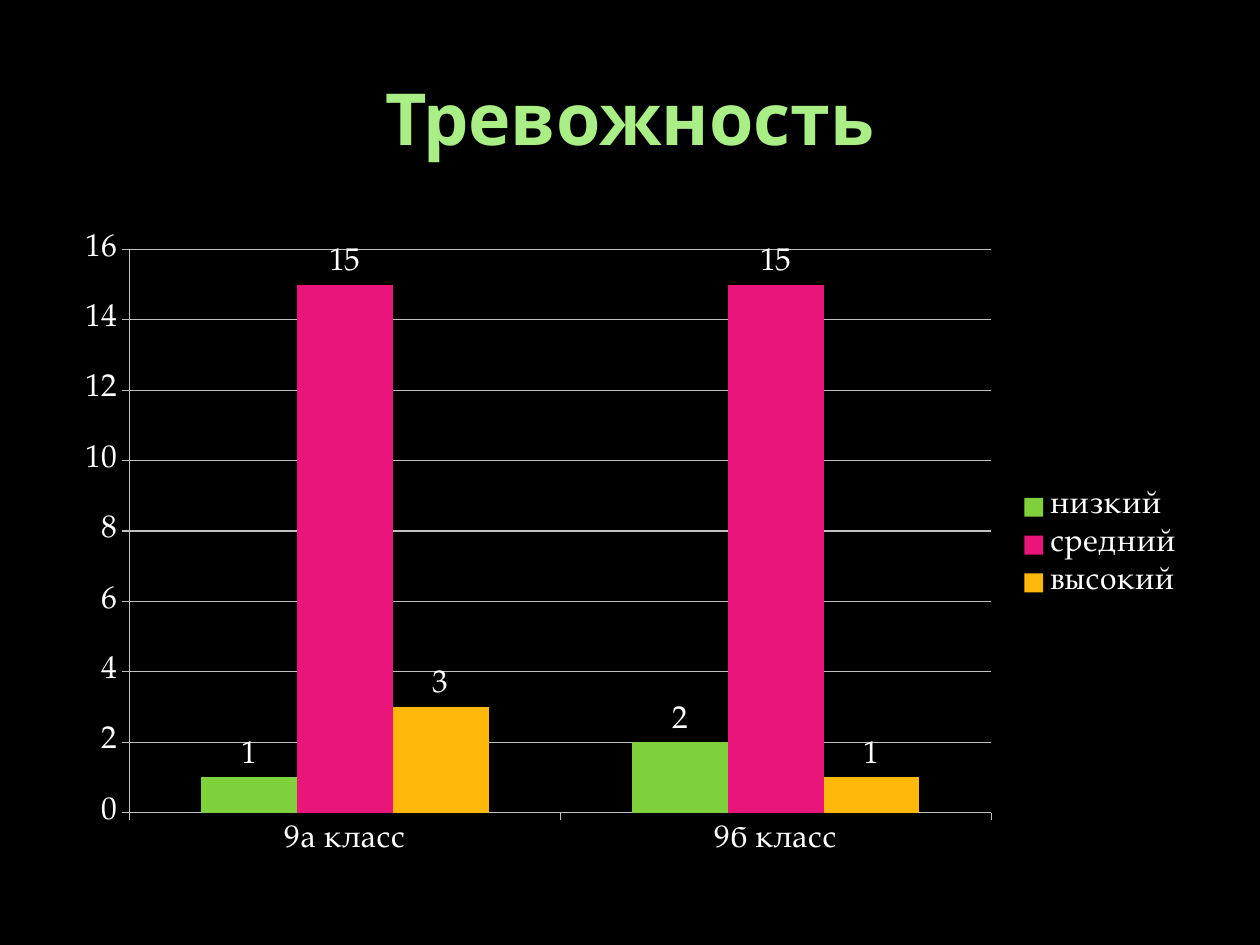
from pptx import Presentation
from pptx.chart.data import CategoryChartData
from pptx.dml.color import RGBColor
from pptx.enum.chart import XL_CHART_TYPE, XL_LABEL_POSITION, XL_LEGEND_POSITION, XL_TICK_MARK
from pptx.enum.text import MSO_ANCHOR, PP_ALIGN
from pptx.util import Cm, Pt

CATEGORIES = ["9а класс", "9б класс"]
LEVELS = [
    ("низкий", [1, 2], "7FD13B"),
    ("средний", [15, 15], "EA157A"),
    ("высокий", [3, 1], "FEB80A"),
]


def color(value):
    return RGBColor.from_string(value)


def format_font(font, name, size, fill, bold=False):
    font.name = name
    font.size = Pt(size)
    font.bold = bold
    font.color.rgb = color(fill)


def add_text(slide, box, text, align=PP_ALIGN.LEFT, **font_format):
    shape = slide.shapes.add_textbox(*map(Cm, box))
    frame = shape.text_frame
    frame.word_wrap = True
    frame.vertical_anchor = MSO_ANCHOR.MIDDLE
    paragraph = frame.paragraphs[0]
    paragraph.alignment = align
    run = paragraph.add_run()
    run.text = text
    format_font(run.font, **font_format)
    return shape


def format_line(line):
    line.color.rgb = color("C0C0C0")
    line.width = Pt(0.75)


def add_level_chart(slide, box):
    data = CategoryChartData()
    data.categories = CATEGORIES
    for name, values, _ in LEVELS:
        data.add_series(name, values)
    chart = slide.shapes.add_chart(
        XL_CHART_TYPE.COLUMN_CLUSTERED, *map(Cm, box), data
    ).chart
    format_font(chart.font, "TeX Gyre Pagella", 18, "FFFFFF")
    chart.has_title = False
    chart.has_legend = True
    chart.legend.position = XL_LEGEND_POSITION.RIGHT
    chart.legend.include_in_layout = False

    for axis in (chart.category_axis, chart.value_axis):
        axis.major_tick_mark = XL_TICK_MARK.OUTSIDE
        format_line(axis.format.line)
    value_axis = chart.value_axis
    value_axis.minimum_scale = 0
    value_axis.maximum_scale = 16
    value_axis.major_unit = 2
    value_axis.has_major_gridlines = True
    format_line(value_axis.major_gridlines.format.line)

    plot = chart.plots[0]
    plot.gap_width = 150
    plot.overlap = 0
    plot.vary_by_categories = False
    for series, (_, _, fill) in zip(plot.series, LEVELS):
        series.format.fill.solid()
        series.format.fill.fore_color.rgb = color(fill)
        labels = series.data_labels
        labels.show_value = True
        labels.position = XL_LABEL_POSITION.OUTSIDE_END


def build_anxiety_slide(presentation):
    slide = presentation.slides.add_slide(presentation.slide_layouts[6])
    slide.background.fill.solid()
    slide.background.fill.fore_color.rgb = color("000000")
    left, width = 1.27, 22.86
    add_text(slide, (left, 0.76, width, 3.18), "Тревожность", align=PP_ALIGN.CENTER,
             name="Noto Sans", size=41, fill="A9EF86", bold=True)
    add_level_chart(slide, (left, 4.45, width, 13.08))


def main():
    presentation = Presentation()
    presentation.slide_width = Cm(25.4)
    presentation.slide_height = Cm(19.05)
    build_anxiety_slide(presentation)
    presentation.save("out.pptx")


if __name__ == "__main__":
    main()
